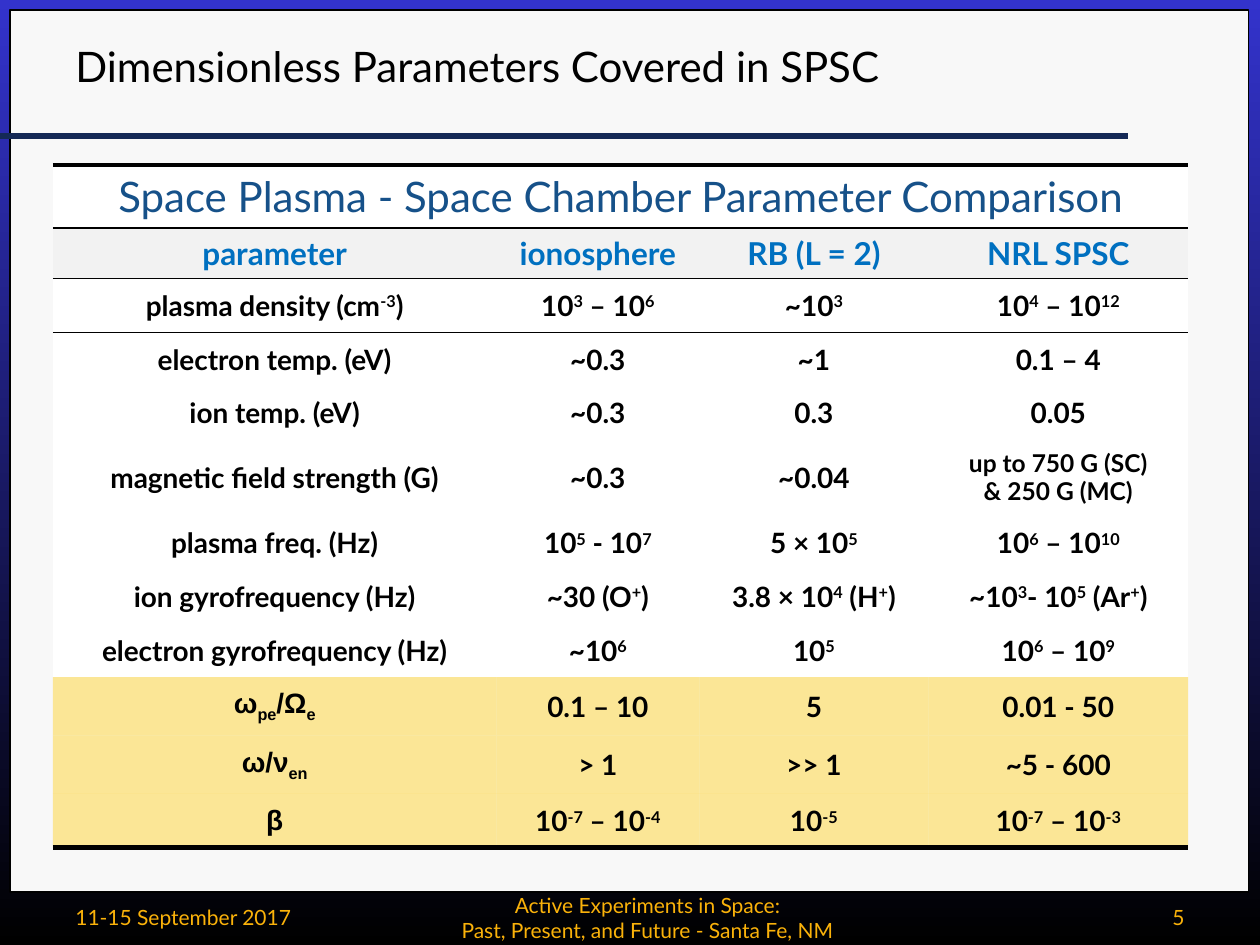
from lxml.etree import SubElement
from pptx import Presentation
from pptx.dml.color import RGBColor
from pptx.enum.shapes import MSO_CONNECTOR, MSO_SHAPE
from pptx.enum.text import MSO_ANCHOR, PP_ALIGN
from pptx.oxml.ns import qn
from pptx.util import Inches, Pt

BASELINES = {"^": "30000", "_": "-25000"}
GOLD = "FAB20A"


def rgb(color):
    return RGBColor.from_string(color)


def write(tf, text, size=16, color="000000", bold=False, font="Lato",
          align=PP_ALIGN.CENTER, spacing=None):
    """Lines split at newlines; "|^" starts a superscript, "|_" a subscript, "|" ends it."""
    for i, line in enumerate(text.split("\n")):
        p = tf.add_paragraph() if i else tf.paragraphs[0]
        p.alignment = align
        if spacing:
            p.line_spacing = spacing
        for part in line.split("|"):
            r = p.add_run()
            r.text = part.lstrip("^_")
            r.font.name, r.font.size, r.font.bold = font, Pt(size), bold
            r.font.color.rgb = rgb(color)
            if part[0] in BASELINES:
                r.font._element.set("baseline", BASELINES[part[0]])


prs = Presentation()
prs.slide_width, prs.slide_height = Inches(10), Inches(7.5)
s = prs.slides.add_slide(prs.slide_layouts[6])

# Background gradient, top to bottom
fill = s.background.fill
fill.gradient()
fill.gradient_angle = 270
for stop, position, color in zip(fill.gradient_stops, (0, 1), ("3333CC", "000000")):
    stop.position = position
    stop.color.rgb = rgb(color)

# Light panel and rule under the title
panel = s.shapes.add_shape(MSO_SHAPE.RECTANGLE, Inches(0.08), Inches(0.08),
                           Inches(9.83), Inches(7))
panel.shadow.inherit = False
panel.fill.solid()
panel.fill.fore_color.rgb = rgb("F8F8F8")
panel.line.color.rgb = rgb("000000")
panel.line.width = Pt(0.75)

rule = s.shapes.add_connector(MSO_CONNECTOR.STRAIGHT, Inches(0), Inches(1.08),
                              Inches(8.95), Inches(1.08))
rule.line.color.rgb = rgb("142956")
rule.line.width = Pt(3)
SubElement(rule._element.spPr, qn("a:effectLst"))

# Title and footer texts
texts = [
    ("Dimensionless Parameters Covered in SPSC", 0.5, 0.04, 8.39, 0.97, 24, "000000", PP_ALIGN.LEFT),
    ("11-15 September 2017", 0.5, 7.08, 2.33, 0.4, 12, GOLD, PP_ALIGN.LEFT),
    ("Active Experiments in Space:\nPast, Present, and Future - Santa Fe, NM",
     2.9, 7.08, 4.48, 0.4, 12, GOLD, PP_ALIGN.CENTER),
    ("5", 7.17, 7.08, 2.33, 0.4, 12, GOLD, PP_ALIGN.RIGHT),
]
for text, x, y, w, h, size, color, align in texts:
    tf = s.shapes.add_textbox(Inches(x), Inches(y), Inches(w), Inches(h)).text_frame
    tf.word_wrap = True
    tf.vertical_anchor = MSO_ANCHOR.MIDDLE
    write(tf, text, size=size, color=color, align=align)

# Parameter table
rows = [
    ["Space Plasma - Space Chamber Parameter Comparison"],
    ["parameter", "ionosphere", "RB (L = 2)", "NRL SPSC"],
    ["plasma density (cm|^-3|)", "10|^3| – 10|^6", "~10|^3", "10|^4| – 10|^12"],
    ["electron temp. (eV)", "~0.3", "~1", "0.1 – 4"],
    ["ion temp. (eV)", "~0.3", "0.3", "0.05"],
    ["magnetic field strength (G)", "~0.3", "~0.04", "up to 750 G (SC)\n& 250 G (MC)"],
    ["plasma freq. (Hz)", "10|^5| - 10|^7", "5 × 10|^5", "10|^6| – 10|^10"],
    ["ion gyrofrequency (Hz)", "~30 (O|^+|)", "3.8 × 10|^4| (H|^+|)",
     "~10|^3|- 10|^5| (Ar|^+|)"],
    ["electron gyrofrequency (Hz)", "~10|^6", "10|^5", "10|^6| – 10|^9"],
    ["ω|_pe|/Ω|_e", "0.1 – 10", "5", "0.01 - 50"],
    ["ω/ν|_en", "> 1", ">> 1", "~5 - 600"],
    ["β", "10|^-7| – 10|^-4", "10|^-5", "10|^-7| – 10|^-3"],
]
widths = [3.52, 1.61, 1.82, 2.06]
heights = [0.5, 0.4] + [0.37] * 3 + [0.54] + [0.37] * 6
first_ratio = 9  # first of the highlighted dimensionless rows
borders = {0: {"T": 3, "B": 1}, 1: {"T": 1, "B": 1}, 2: {"T": 1}, 11: {"B": 3}}

frame = s.shapes.add_table(len(rows), len(widths), Inches(0.42), Inches(1.31),
                           Inches(sum(widths)), Inches(sum(heights)))
table = frame.table
table.first_row = table.horz_banding = False
table._tbl.tblPr.find(qn("a:tableStyleId")).text = "{2D5ABB26-0587-4C30-8999-92F81FD0307C}"
for column, w in zip(table.columns, widths):
    column.width = Inches(w)
for row, h in zip(table.rows, heights):
    row.height = Inches(h)
table.cell(0, 0).merge(table.cell(0, len(widths) - 1))

for i, row in enumerate(rows):
    for j in range(len(widths)):
        cell = table.cell(i, j)
        cell.vertical_anchor = MSO_ANCHOR.MIDDLE
        cell.margin_left = cell.margin_right = Inches(0.1)
        cell.margin_top = cell.margin_bottom = Inches(0.05 if i < 2 else 0.08)

        # Borders come before the fill in the cell properties
        tcPr = cell._tc.get_or_add_tcPr()
        for side, width in borders.get(i, {}).items():
            ln = SubElement(tcPr, qn("a:ln" + side), w=str(Pt(width)))
            SubElement(SubElement(ln, qn("a:solidFill")), qn("a:srgbClr"), val="000000")
        cell.fill.solid()
        if i >= first_ratio:
            cell.fill.fore_color.rgb = rgb("FFD636")
            SubElement(tcPr.find(".//" + qn("a:srgbClr") + "[@val='FFD636']"),
                       qn("a:alpha"), val="50000")
        else:
            cell.fill.fore_color.rgb = rgb("F2F2F2" if i == 1 else "FFFFFF")

        if j >= len(row):
            continue
        if i == 0:
            style = dict(size=24, color="165189")
        elif i == 1:
            style = dict(size=18, color="0070C0", bold=True)
        elif "\n" in row[j]:
            style = dict(size=14, bold=True, spacing=0.95)
        else:
            style = dict(bold=True, font="Arial" if i >= first_ratio and j == 0 else "Lato")
        write(cell.text_frame, row[j], **style)

prs.save("out.pptx")
